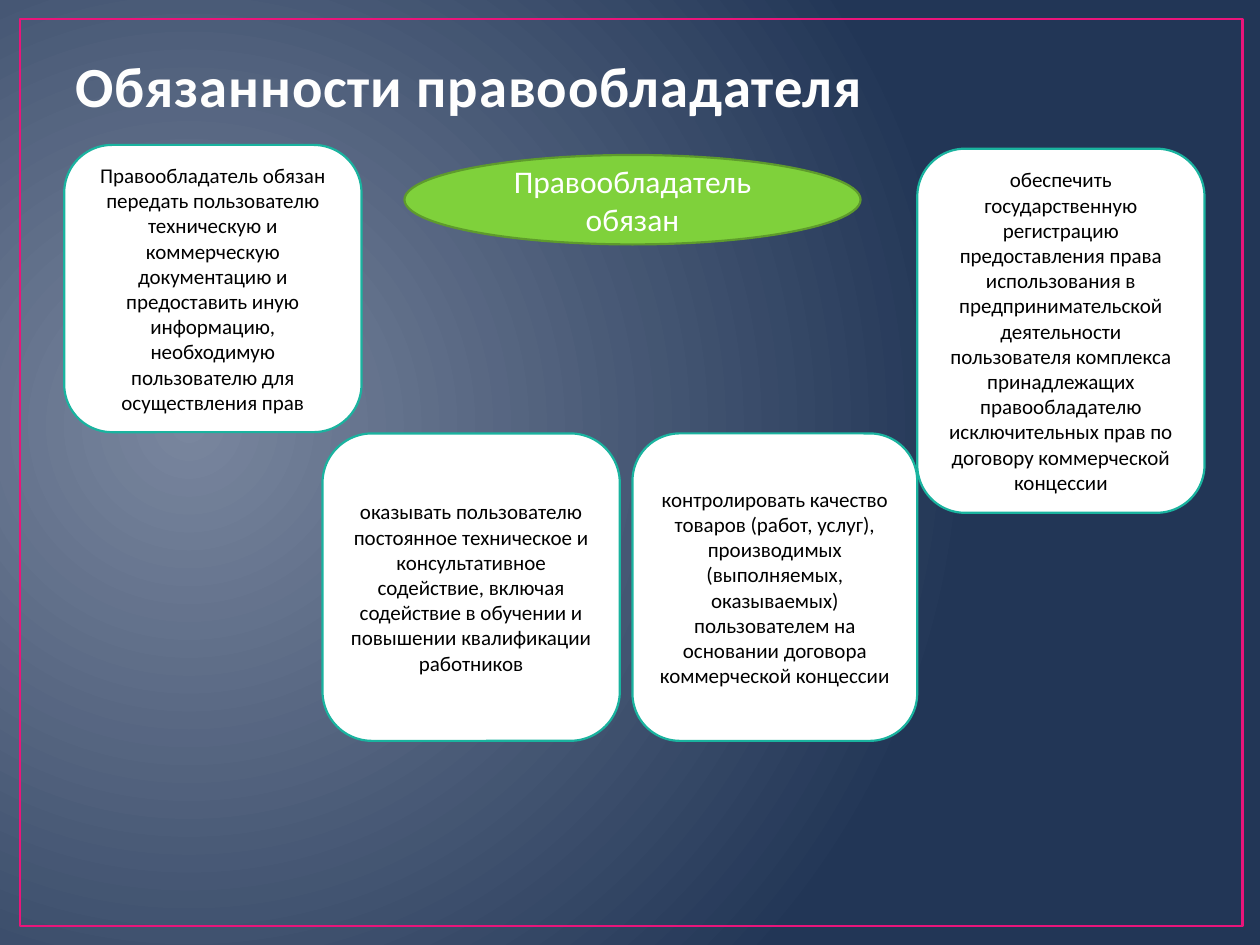
from lxml.etree import SubElement
from pptx import Presentation
from pptx.dml.color import RGBColor
from pptx.enum.shapes import MSO_SHAPE
from pptx.enum.text import MSO_ANCHOR, PP_ALIGN
from pptx.oxml.ns import qn
from pptx.util import Inches, Pt

FONT = "Calibri"

# Left, top, width, height and wording of each duty
DUTIES = [
    (0.51, 1.15, 2.36, 2.28,
     "Правообладатель обязан передать пользователю техническую и коммерческую "
     "документацию и предоставить иную информацию, необходимую пользователю "
     "для осуществления прав"),
    (7.28, 1.18, 2.28, 2.89,
     "обеспечить государственную регистрацию предоставления права использования "
     "в предпринимательской деятельности пользователя комплекса принадлежащих "
     "правообладателю исключительных прав по договору коммерческой концессии"),
    (2.56, 3.44, 2.36, 2.44,
     "оказывать пользователю постоянное техническое и консультативное содействие, "
     "включая содействие в обучении и повышении квалификации работников"),
    (5.02, 3.44, 2.26, 2.44,
     "контролировать качество товаров (работ, услуг), производимых (выполняемых, "
     "оказываемых) пользователем на основании договора коммерческой концессии"),
]


def rgb(color):
    return RGBColor.from_string(color)


def paint_background(slide, center, edge):
    fill = slide.background.fill
    fill.gradient()
    for stop, color in zip(fill.gradient_stops, (center, edge)):
        stop.color.rgb = rgb(color)
    # Swap the linear direction for a circular one
    gradient = slide.element.find(".//" + qn("a:gradFill"))
    gradient.remove(gradient.find(qn("a:lin")))
    circle = SubElement(gradient, qn("a:path"), path="circle")
    SubElement(circle, qn("a:fillToRect"),
               l="15000", t="50000", r="85000", b="60000")


def add_text(shape, text, size, color, anchor, align):
    frame = shape.text_frame
    frame.word_wrap = True
    frame.vertical_anchor = anchor
    paragraph = frame.paragraphs[0]
    paragraph.alignment = align
    run = paragraph.add_run()
    run.text = text
    run.font.name = FONT
    run.font.size = Pt(size)
    run.font.color.rgb = rgb(color)
    return run


def add_panel(slide, kind, box, line, line_width, fill=None):
    panel = slide.shapes.add_shape(kind, *map(Inches, box))
    panel.shadow.inherit = False
    if fill:
        panel.fill.solid()
        panel.fill.fore_color.rgb = rgb(fill)
    else:
        panel.fill.background()
    panel.line.color.rgb = rgb(line)
    panel.line.width = Pt(line_width)
    return panel


def add_title(slide, text):
    title = slide.shapes.add_textbox(*map(Inches, (0.5, 0.3, 9, 0.69)))
    run = add_text(title, text, 32.4, "FEFEFE", MSO_ANCHOR.BOTTOM, PP_ALIGN.LEFT)
    run.font.bold = True
    # Letter spacing and a thin outline around the letters
    properties = run.font._element
    properties.set("spc", "50")
    outline = SubElement(properties, qn("a:ln"), w=str(Pt(1.05)))
    SubElement(SubElement(outline, qn("a:solidFill")), qn("a:srgbClr"), val="3F6D19")
    properties.insert(0, outline)


def add_labelled_panel(slide, kind, box, line, fill, text, size, color):
    panel = add_panel(slide, kind, box, line, 1.25, fill)
    add_text(panel, text, size, color, MSO_ANCHOR.MIDDLE, PP_ALIGN.CENTER)


def main():
    deck = Presentation()
    deck.slide_width, deck.slide_height = Inches(10), Inches(7.5)
    slide = deck.slides.add_slide(deck.slide_layouts[6])

    # Background, frame and title
    paint_background(slide, "79869E", "223656")
    add_panel(slide, MSO_SHAPE.RECTANGLE, (0.16, 0.15, 9.7, 7.2), "EA157A", 1.5)
    add_title(slide, "Обязанности правообладателя")

    # Central subject
    add_labelled_panel(slide, MSO_SHAPE.OVAL, (3.21, 1.23, 3.62, 0.71),
                       "5E9B2C", "7FD13B", "Правообладатель обязан", 18, "FFFFFF")

    # Duties around it
    for *box, duty in DUTIES:
        add_labelled_panel(slide, MSO_SHAPE.ROUNDED_RECTANGLE, box,
                           "1AB39F", "FFFFFF", duty, 12, "000000")

    deck.save("out.pptx")


if __name__ == "__main__":
    main()
